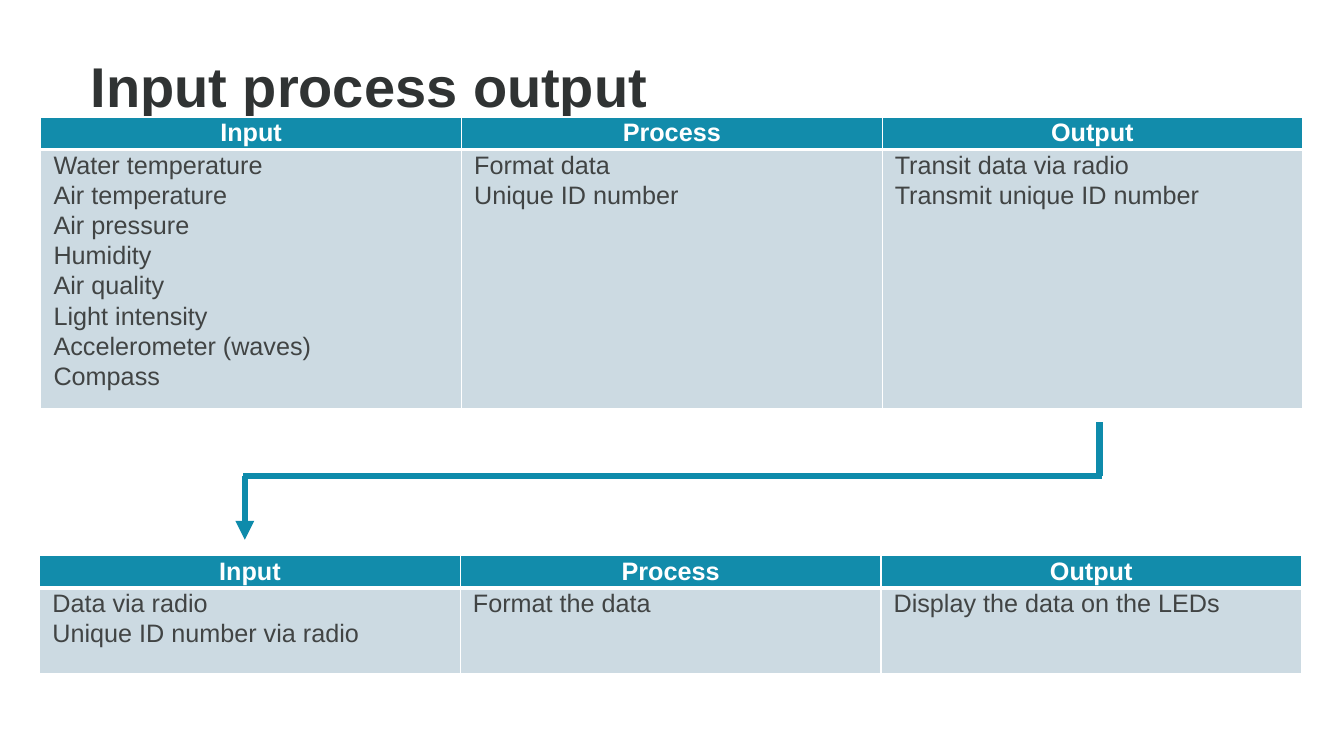
from pptx import Presentation
from pptx import util as u
from pptx.dml.color import RGBColor
from pptx.enum import shapes, text
from pptx.oxml import ns
from lxml import etree

FONT = "Arial"
TEAL, PALE, WHITE = "128CAB", "CCDAE2", "FFFFFF"
DARK, GREY, ARROW = "303333", "414444", "0E8BAB"
HEADS = ["Input", "Process", "Output"]

SENDER = [
    ["Water temperature", "Air temperature", "Air pressure", "Humidity",
     "Air quality", "Light intensity", "Accelerometer (waves)", "Compass"],
    ["Format data", "Unique ID number"],
    ["Transit data via radio", "Transmit unique ID number"],
]
READER = [
    ["Data via radio", "Unique ID number via radio"],
    ["Format the data"],
    ["Display the data on the LEDs"],
]


def color(code):
    return RGBColor.from_string(code)


def write(frame, lines, size, code, bold=False, align=text.PP_ALIGN.LEFT):
    frame.text = "\n".join(lines)
    for para in frame.paragraphs:
        para.alignment = align
        para.line_spacing = 1.07
        for run in para.runs:
            font = run.font
            font.name, font.size, font.bold = FONT, u.Pt(size), bold
            font.color.rgb = color(code)


def add_title(slide, words):
    box = slide.shapes.add_textbox(u.Cm(2.29), u.Cm(0.99), u.Cm(28.14), u.Cm(1.55))
    frame = box.text_frame
    frame.word_wrap = True
    frame.margin_left = frame.margin_right = frame.margin_bottom = 0
    frame.margin_top = u.Cm(0.18)
    write(frame, [words], 40, DARK, bold=True)


def add_edges(cell, top, bottom):
    # Cell borders come before the fill in the cell properties
    props = cell._tc.get_or_add_tcPr()
    widths = {"a:lnL": 1, "a:lnR": 1, "a:lnT": top, "a:lnB": bottom}
    for spot, (tag, width) in enumerate(widths.items()):
        edge = etree.Element(ns.qn(tag), w=str(u.Pt(width)))
        fill = etree.SubElement(edge, ns.qn("a:solidFill"))
        etree.SubElement(fill, ns.qn("a:srgbClr"), val=WHITE)
        props.insert(spot, edge)


def set_cell(cell, lines, head):
    cell.margin_left = cell.margin_right = u.Cm(0.32)
    cell.margin_top = cell.margin_bottom = 0
    cell.fill.solid()
    cell.fill.fore_color.rgb = color(TEAL if head else PALE)
    if head:
        write(cell.text_frame, lines, 18, WHITE, True, text.PP_ALIGN.CENTER)
        add_edges(cell, 1, 3)
    else:
        write(cell.text_frame, lines, 18, GREY)
        add_edges(cell, 3, 1)


def add_grid(slide, left, top, heights, body):
    frame = slide.shapes.add_table(2, len(HEADS), u.Cm(left), u.Cm(top),
                                   u.Cm(31.8), u.Cm(sum(heights)))
    grid = frame.table
    for row, height in zip(grid.rows, heights):
        row.height = u.Cm(height)
    for col, (head, lines) in enumerate(zip(HEADS, body)):
        grid.columns[col].width = u.Cm(10.6)
        set_cell(grid.cell(0, col), [head], True)
        set_cell(grid.cell(1, col), lines, False)


def add_line(slide, start, end, arrow=False):
    ends = [u.Cm(n) for n in (*start, *end)]
    link = slide.shapes.add_connector(shapes.MSO_CONNECTOR.STRAIGHT, *ends)
    link.line.color.rgb = color(ARROW)
    link.line.width = u.Pt(4.5)
    if arrow:
        etree.SubElement(link.line._get_or_add_ln(), ns.qn("a:tailEnd"), type="triangle")
    etree.SubElement(link._element.spPr, ns.qn("a:effectLst"))


def main():
    deck = Presentation()
    deck.slide_width, deck.slide_height = u.Cm(33.87), u.Cm(19.05)
    slide = deck.slides.add_slide(deck.slide_layouts[6])

    # Title and the two tables
    add_title(slide, "Input process output")
    add_grid(slide, 1.03, 2.95, [0.71, 2.29], SENDER)
    add_grid(slide, 1, 14, [0.66, 2.16], READER)

    # Bent arrow from the first output to the second input
    add_line(slide, (27.71, 10.64), (27.71, 11.99))
    add_line(slide, (27.76, 11.99), (6.12, 11.99))
    add_line(slide, (6.17, 11.99), (6.17, 13.6), arrow=True)

    deck.save("out.pptx")


if __name__ == "__main__":
    main()
